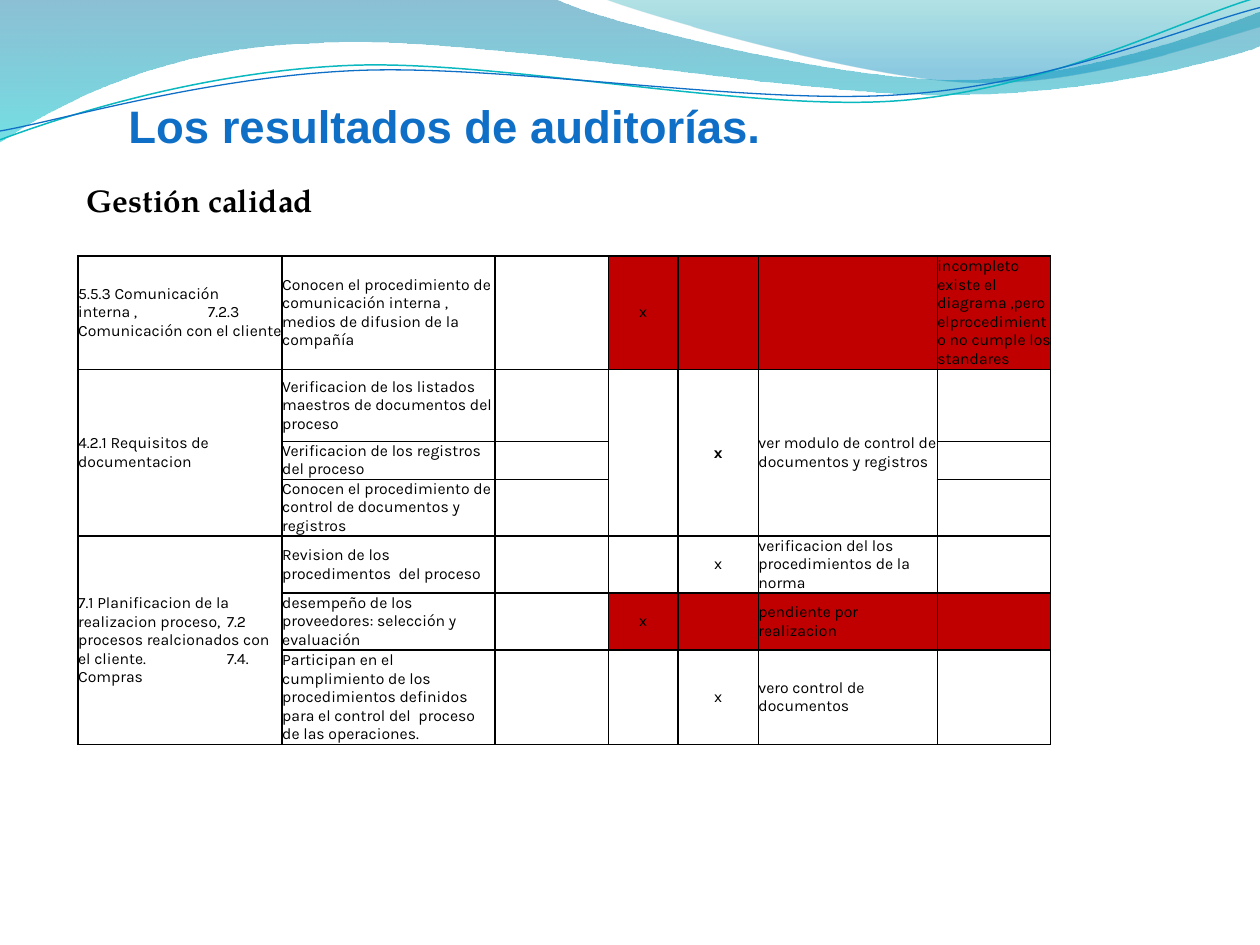
from pptx import Presentation
from pptx.dml.color import RGBColor
from pptx.enum import lang, text
from pptx.oxml import ns, parse_xml
from pptx.util import Inches, Pt

COLORS = {"white": "FFFFFF", "black": "000000", "red": "C00000", "blue": "0F6FC6",
          "teal": "0AB8BF", "deep": "0074A1", "aqua": "00C6CF",
          "sea": "00A1A9", "sky": "008BBF"}


def write(tf, words, size=9, font="Karla", color="black", bold=False, align=None):
    tf.word_wrap = True
    tf.text = words
    p = tf.paragraphs[0]
    p.alignment = align
    for r in p.runs:
        r.font.size = Pt(size)
        r.font.name = font
        r.font.bold = bold
        r.font.color.rgb = RGBColor.from_string(COLORS[color])
        r.font.language_id = lang.MSO_LANGUAGE_ID.SPANISH
    for br in p._p.findall(ns.qn("a:br")):
        br.append(parse_xml(f'<a:rPr {ns.nsdecls("a")} sz="{size * 100}">'
                            f'<a:latin typeface="{font}"/></a:rPr>'))
    if not words:
        p._p.get_or_add_endParaRPr().set("sz", str(size * 100))
    return p


def draw_outline(s, start, segments, closed=True):
    points = [(Inches(x), Inches(y)) for x, y in [start] + sum(segments, [])]
    fb = s.shapes.build_freeform(*points[0])
    fb.add_line_segments(points[1:], close=closed)
    sp = fb.convert_to_shape()
    sp.shadow.inherit = False
    steps = list(sp._element.iter(ns.qn("a:lnTo")))
    for segment in segments:
        group, steps = steps[:len(segment)], steps[len(segment):]
        if len(group) == 3:
            curve = parse_xml(f'<a:cubicBezTo {ns.nsdecls("a")}/>')
            group[0].addprevious(curve)
            for step in group:
                curve.append(step[0])
                step.getparent().remove(step)
    return sp


prs = Presentation()
prs.slide_width, prs.slide_height = Inches(10), Inches(7.5)
s = prs.slides.add_slide(prs.slide_layouts[6])

waves = [
    ((0, 0), [[(4.4, -0.01)],
              [(4.76, 0.17), (6.64, 0.63), (7.58, 0.63)],
              [(8.53, 0.63), (9.58, 0.26), (10, 0.09)],
              [(10.01, 0.36)],
              [(9.83, 0.44), (8.7, 0.76), (7.46, 0.75)],
              [(6.22, 0.75), (3.82, 0.28), (2.57, 0.34)],
              [(1.29, 0.36), (0.46, 0.83), (-0.01, 1.13)],
              [(0, 0)]],
     [(0, "deep", 45), (1, "aqua", 55)]),
    ((4.79, -0.01), [[(5.09, 0.11), (6.82, 0.62), (7.69, 0.65)],
                     [(8.56, 0.69), (9.61, 0.32), (10, 0.21)],
                     [(10, 0)],
                     [(4.79, -0.01)]],
     [(0, "sea", 30), (0.8, "sky", 45)]),
]
for start, segments, stops in waves:
    sp = draw_outline(s, start, segments)
    sp.line.fill.background()
    sp.fill.gradient()
    sp.fill.gradient_angle = 270
    for stop, (position, color, _) in zip(sp.fill.gradient_stops, stops):
        stop.position = position
        stop.color.rgb = RGBColor.from_string(COLORS[color])
    for clr, (_, _, opacity) in zip(sp._element.iter(ns.qn("a:srgbClr")), stops):
        clr.append(parse_xml(f'<a:alpha {ns.nsdecls("a")} val="{opacity * 1000}"/>'))

lines = [
    ("teal", 0.85, (0, 1.11), [[(0.48, 0.93), (1.58, 0.57), (2.77, 0.52)],
                               [(3.95, 0.47), (5.93, 0.89), (7.13, 0.8)],
                               [(8.33, 0.71), (9.38, 0.15), (9.98, -0.02)]]),
    ("blue", 0.75, (0, 1.04), [[(0.47, 0.96), (1.64, 0.61), (2.83, 0.56)],
                               [(4.03, 0.51), (5.97, 0.84), (7.17, 0.75)],
                               [(8.36, 0.67), (9.41, 0.21), (10, 0.06)]]),
]
for color, width, start, segments in lines:
    sp = draw_outline(s, start, segments, closed=False)
    sp.fill.background()
    sp.line.color.rgb = RGBColor.from_string(COLORS[color])
    sp.line.width = Pt(width)

headings = [
    ("Los resultados de auditorías.", (0.92, 0.72, 9, 0.55), 26, "Arial", "blue"),
    ("Gestión calidad", (0.59, 1.39, 3.36, 0.4), 18, "TeX Gyre Pagella", "black"),
]
for words, box, size, font, color in headings:
    tf = s.shapes.add_textbox(*map(Inches, box)).text_frame
    tf.vertical_anchor = text.MSO_ANCHOR.MIDDLE
    write(tf, words, size=size, font=font, color=color, bold=True)

rows = [
    ["5.5.3 Comunicación\vinterna ,\t7.2.3 Comunicación con el cliente",
     "Conocen el procedimiento de comunicación interna , medios de difusion de la compañía",
     "", "x", "", "",
     "incompleto existe el diagrama ,pero elprocedimiento no cumple los standares"],
    ["4.2.1 Requisitos de documentacion",
     "Verificacion de los listados maestros de documentos del proceso",
     "", "", "x", "ver modulo de control de documentos y registros", ""],
    ["", "Verificacion de los registros del proceso", "", "", "", "", ""],
    ["", "Conocen el procedimiento de control de documentos y registros", "", "", "", "", ""],
    ["7.1 Planificacion de la realizacion proceso,\t7.2 procesos realcionados con "
     "el cliente.\t7.4. Compras",
     "Revision de los procedimentos  del proceso",
     "", "", "x", "verificacion del los procedimientos de la norma", ""],
    ["", "desempeño de los proveedores: selección y evaluación",
     "", "x", "", "pendiente por realizacion", ""],
    ["", "Participan en el cumplimiento de los procedimientos definidos para el control "
     "del  proceso de las operaciones.",
     "", "", "x", "vero control de documentos", ""],
]
widths = [1.62, 1.69, 0.9, 0.55, 0.64, 1.42, 0.9]
heights = [0.9, 0.57, 0.3, 0.45, 0.45, 0.45, 0.75]
tab_stops = {0: 1.03, 4: 1.18}
red_rows = (0, 5)

frame = s.shapes.add_table(len(rows), len(widths), Inches(0.62), Inches(2.03),
                           Inches(sum(widths)), Inches(sum(heights)))
table = frame.table
table.first_row = table.horz_banding = False
for column, width in zip(table.columns, widths):
    column.width = Inches(width)
for row, height in zip(table.rows, heights):
    row.height = Inches(height)

for i, row in enumerate(rows):
    for j, words in enumerate(row):
        cell = table.cell(i, j)
        cell.margin_left = cell.margin_right = cell.margin_top = cell.margin_bottom = 0
        cell.vertical_anchor = text.MSO_ANCHOR.MIDDLE
        p = write(cell.text_frame, words, bold=(i, j) == (1, 4),
                  align=text.PP_ALIGN.CENTER if words == "x" else None)
        if j == 0 and i in tab_stops:
            p._p.get_or_add_pPr().append(parse_xml(
                f'<a:tabLst {ns.nsdecls("a")}>'
                f'<a:tab pos="{Inches(tab_stops[i])}" algn="l"/></a:tabLst>'))
        cell.fill.solid()
        fill = "red" if i in red_rows and j >= 3 else "white"
        cell.fill.fore_color.rgb = RGBColor.from_string(COLORS[fill])
        tcPr = cell._tc.get_or_add_tcPr()
        for k, side in enumerate(("lnL", "lnR", "lnT", "lnB")):
            tcPr.insert(k, parse_xml(
                f'<a:{side} {ns.nsdecls("a")} w="{Pt(1)}"><a:solidFill>'
                f'<a:srgbClr val="{COLORS["black"]}"/></a:solidFill></a:{side}>'))

for first, last, j in [(1, 3, 0), (1, 3, 3), (1, 3, 4), (1, 3, 5), (4, 6, 0)]:
    table.cell(first, j).merge(table.cell(last, j))

prs.save("out.pptx")
